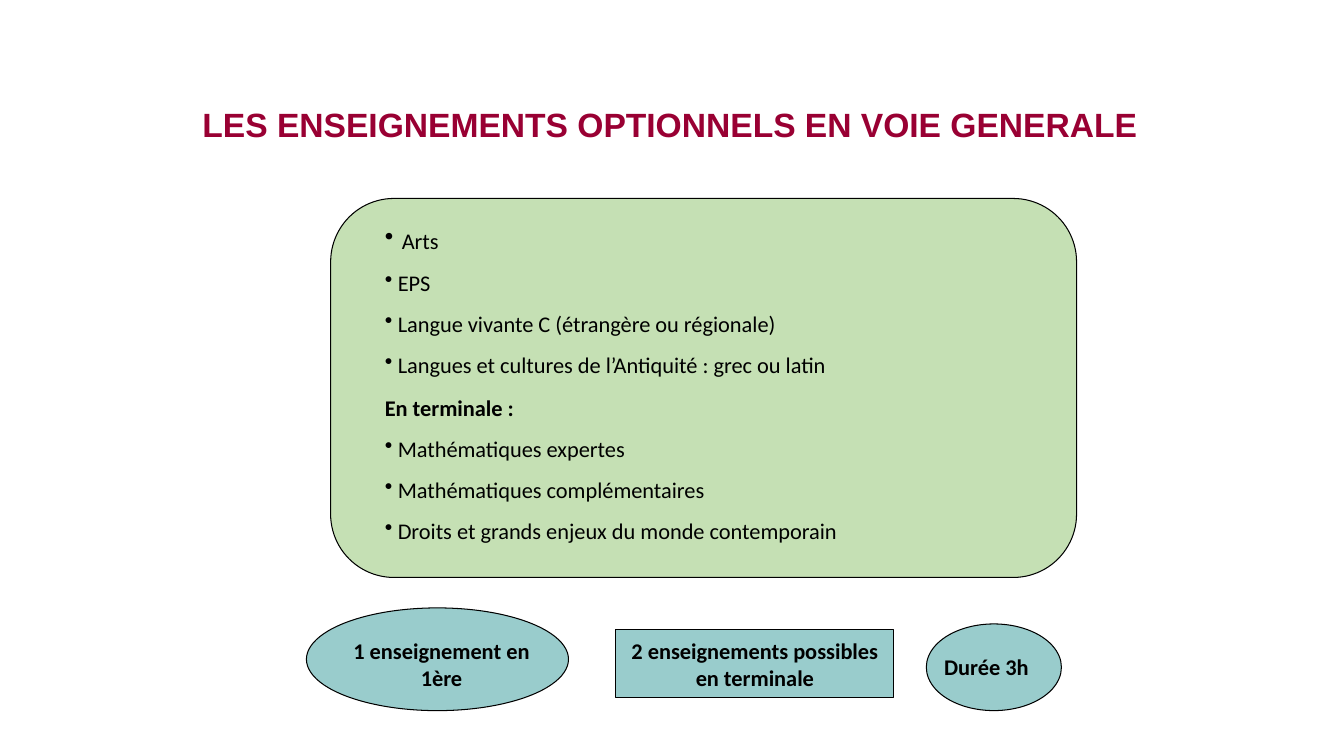
from lxml.etree import SubElement
from pptx import Presentation
from pptx.dml.color import RGBColor
from pptx.enum.shapes import MSO_SHAPE as Shape
from pptx.enum.text import MSO_ANCHOR as Anchor, PP_ALIGN as Align
from pptx.oxml.ns import qn
from pptx.util import Pt

# Content
COLORS = {"title": "990033", "panel": "C5E0B4", "badge": "99CCCC", "ink": "000000"}
TITLE = "LES ENSEIGNEMENTS OPTIONNELS EN VOIE GENERALE"
COMMON_OPTIONS = [
    "EPS",
    "Langue vivante C (étrangère ou régionale)",
    "Langues et cultures de l’Antiquité : grec ou latin",
]
FINAL_YEAR_HEADING = "En terminale :"
FINAL_YEAR_OPTIONS = [
    "Mathématiques expertes",
    "Mathématiques complémentaires",
    "Droits et grands enjeux du monde contemporain",
]

# Places: left, top, width, height in points
TITLE_AREA = (137.5, 16.5, 754, 90)
PANEL_AREA = (236.2, 141.8, 532.8, 270.7)
OPTIONS_AREA = (267.8, 157, 430.6, 265)
BADGES = [
    ("1 enseignement en 1ère", Shape.OVAL, Align.CENTER,
     (218.9, 434.2, 187.2, 73.4), (236.2, 451.4, 158.4, 46)),
    ("2 enseignements possibles en terminale", Shape.RECTANGLE, Align.CENTER,
     (439.9, 450, 198.7, 48.2), (439.9, 451.4, 198.7, 46)),
    ("Durée 3h", Shape.OVAL, Align.LEFT,
     (661.7, 445.7, 96.5, 61.9), (667.4, 463, 90.7, 26.6)),
]

BODY = {"name": "Calibri", "size": Pt(16), "bold": False}
STRONG = {**BODY, "bold": True}
FIRST_GAP = {"name": "DejaVu Sans", "size": Pt(18), "bold": False}
HEADLINE = {"name": "Arial", "size": Pt(24), "bold": True}

deck = Presentation()
deck.slide_width, deck.slide_height = Pt(960), Pt(540)
page = deck.slides.add_slide(deck.slide_layouts[6])


def add_outline(kind, area, color):
    outline = page.shapes.add_shape(kind, *map(Pt, area))
    outline.shadow.inherit = False
    outline.fill.solid()
    outline.fill.fore_color.rgb = RGBColor.from_string(COLORS[color])
    outline.line.color.rgb = RGBColor.from_string(COLORS["ink"])
    outline.line.width = Pt(0.75)
    return outline


def add_text(area, paragraphs, color="ink", anchor=Anchor.TOP):
    """Each paragraph is (spans, paragraph format, bulleted)."""
    frame = page.shapes.add_textbox(*map(Pt, area)).text_frame
    frame.word_wrap = True
    frame.vertical_anchor = anchor
    for index, (spans, layout, bulleted) in enumerate(paragraphs):
        para = frame.add_paragraph() if index else frame.paragraphs[0]
        for key, value in layout.items():
            setattr(para, key, value)
        if bulleted:
            SubElement(para._p.get_or_add_pPr(), qn("a:buChar")).set("char", "•")
        for text, style in spans:
            span = para.add_run()
            span.text = text
            span.font.color.rgb = RGBColor.from_string(COLORS[color])
            for key, value in style.items():
                setattr(span.font, key, value)


def bullet(*spans):
    return spans, {"space_before": Pt(10)}, True


# Title
add_text(TITLE_AREA, [([(TITLE, HEADLINE)], {}, False)], "title", Anchor.BOTTOM)

# Panel with the list of options
add_outline(Shape.ROUNDED_RECTANGLE, PANEL_AREA, "panel").adjustments[0] = 0.167
add_text(OPTIONS_AREA, [
    bullet((" ", FIRST_GAP), ("Arts", BODY)),
    *[bullet((f" {option}", BODY)) for option in COMMON_OPTIONS],
    ([(FINAL_YEAR_HEADING, STRONG)], {"space_before": Pt(12)}, False),
    *[bullet((f" {option}", BODY)) for option in FINAL_YEAR_OPTIONS],
])

# Badges under the panel
for label, kind, alignment, area, label_area in BADGES:
    add_outline(kind, area, "badge")
    layout = {"alignment": alignment, "space_before": Pt(8.8)}
    add_text(label_area, [([(label, STRONG)], layout, False)])

deck.save("out.pptx")
